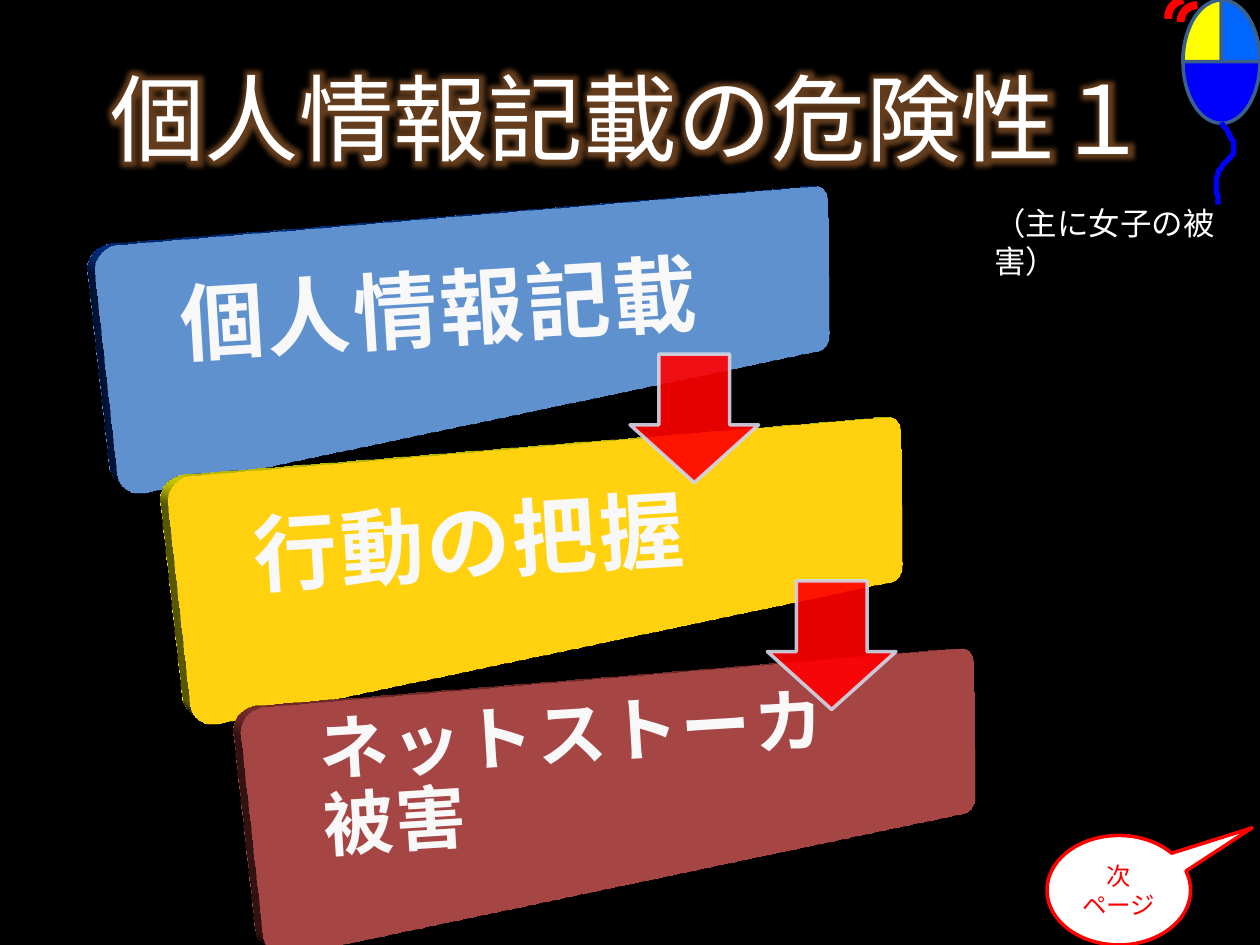
from lxml import etree
from pptx import Presentation
from pptx.dml.color import RGBColor
from pptx.enum.shapes import MSO_SHAPE
from pptx.enum.text import MSO_ANCHOR, MSO_AUTO_SIZE, PP_ALIGN
from pptx.oxml import parse_xml
from pptx.oxml.ns import nsdecls, qn
from pptx.util import Pt

LEFT, CENTER = PP_ALIGN.LEFT, PP_ALIGN.CENTER
TOP, MIDDLE = MSO_ANCHOR.TOP, MSO_ANCHOR.MIDDLE
FIT_SHAPE = MSO_AUTO_SIZE.SHAPE_TO_FIT_TEXT
ROUNDED, DOWN_ARROW = MSO_SHAPE.ROUNDED_RECTANGLE, MSO_SHAPE.DOWN_ARROW
CALLOUT, OVAL = MSO_SHAPE.OVAL_CALLOUT, MSO_SHAPE.OVAL
PIE, ARC = MSO_SHAPE.PIE, MSO_SHAPE.ARC

FONT = "Calibri"
BLACK = RGBColor(0x00, 0x00, 0x00)
WHITE = RGBColor(0xFF, 0xFF, 0xFF)
OFF_WHITE = RGBColor(0xF8, 0xF8, 0xF8)
RED = RGBColor(0xFF, 0x00, 0x00)
PALE_BLUE = RGBColor(0xD0, 0xD8, 0xE8)
STEEL = RGBColor(0x4F, 0x81, 0xBD)
NAVY = RGBColor(0x00, 0x20, 0x60)
DEEP_BLUE = RGBColor(0x00, 0x38, 0xA0)
AMBER = RGBColor(0xFF, 0xC0, 0x00)
OLIVE = RGBColor(0xBC, 0xB8, 0x00)
YELLOW = RGBColor(0xFF, 0xFF, 0x00)
BRICK = RGBColor(0x95, 0x37, 0x35)
MAROON = RGBColor(0x63, 0x25, 0x23)
BLUE = RGBColor(0x00, 0x00, 0xFF)
BRIGHT_BLUE = RGBColor(0x00, 0x66, 0xFF)
MOUSE_EDGE = RGBColor(0x3A, 0x5F, 0x8C)
GLOW = RGBColor(0xF7, 0x96, 0x46)

# Text, size, front, edge and side colour of each step
STEPS = [
    ("個人情報記載", 48, STEEL, NAVY, DEEP_BLUE),
    ("行動の把握", 48, AMBER, OLIVE, YELLOW),
    ("ネットストーカ被害", 40, BRICK, MAROON, BRICK),
]


def write(shape, text, size, color, align=LEFT, anchor=TOP, bold=False,
          wrap=True, margins=(7.2, 3.6, 7.2, 3.6), line=1.0, after=0, spacing=0):
    frame = shape.text_frame
    frame.word_wrap, frame.vertical_anchor = wrap, anchor
    (frame.margin_left, frame.margin_top,
     frame.margin_right, frame.margin_bottom) = map(Pt, margins)
    frame.text = text
    for paragraph in frame.paragraphs:
        paragraph.alignment = align
        paragraph.line_spacing, paragraph.space_after = line, Pt(after)
        for run in paragraph.runs:
            font = run.font
            font.name, font.size, font.bold = FONT, Pt(size), bold
            font.color.rgb = color
            if spacing:
                run._r.get_or_add_rPr().set("spc", str(int(spacing * 100)))
    return frame


def add_text(shapes, box, text, size, color, **text_format):
    return write(shapes.add_textbox(*map(Pt, box)), text, size, color, **text_format)


def style(shape, fill, line, width):
    shape.shadow.inherit = False
    if fill is None:
        shape.fill.background()
    else:
        shape.fill.solid()
        shape.fill.fore_color.rgb = fill
    shape.line.color.rgb = line
    shape.line.width = Pt(width)


def add_preset(shapes, kind, box, fill, line, width=2, adjust=(), flip=False):
    shape = shapes.add_shape(kind, *map(Pt, box))
    style(shape, fill, line, width)
    for index, value in enumerate(adjust):
        shape.adjustments[index] = value
    if flip:
        shape._element.spPr.find(qn("a:xfrm")).set("flipH", "1")
    return shape


def add_glow(frame, color, radius, opacity):
    fill = frame.paragraphs[0].runs[0]._r.rPr.find(qn("a:solidFill"))
    fill.addnext(parse_xml(
        f'<a:effectLst {nsdecls("a")}><a:glow rad="{Pt(radius)}">'
        f'<a:srgbClr val="{color}"><a:alpha val="{opacity * 1000}"/></a:srgbClr>'
        '</a:glow></a:effectLst>'))


def make_translucent(shape, opacity):
    for color in shape._element.spPr.iter(qn("a:srgbClr")):
        etree.SubElement(color, qn("a:alpha")).set("val", str(opacity * 1000))


def extrude(shape, depth, side):
    properties = shape._element.spPr
    properties.append(parse_xml(
        f'<a:scene3d {nsdecls("a")}>'
        '<a:camera prst="perspectiveHeroicExtremeRightFacing"/>'
        '<a:lightRig rig="threePt" dir="t"/></a:scene3d>'))
    properties.append(parse_xml(
        f'<a:sp3d {nsdecls("a")} extrusionH="{Pt(depth)}">'
        f'<a:extrusionClr><a:srgbClr val="{side}"/></a:extrusionClr></a:sp3d>'))


def bezier(start, first, second, end, steps=8):
    weights = [(i / steps, 1 - i / steps) for i in range(1, steps + 1)]
    return [tuple(u**3 * a + 3 * u * u * t * b + 3 * u * t * t * c + t**3 * d
                  for a, b, c, d in zip(start, first, second, end))
            for t, u in weights]


def add_steps(shapes):
    for index, (text, size, front, edge, side) in enumerate(STEPS):
        box = (81.4 + 41.75 * index, 118.1 + 131.9 * index, 473.3, 113.3)
        panel = add_preset(shapes, ROUNDED, box, front, edge, adjust=[0.1])
        inset = size * 0.38
        write(panel, text, size, OFF_WHITE, anchor=MIDDLE, bold=True,
              margins=(inset, inset, inset + 115, inset),
              line=0.9, after=size * 0.35, spacing=1.5)
        extrude(panel, 15, side)
    for index in range(len(STEPS) - 1):
        box = (360 + 78.5 * index, 202.3 + 129.6 * index, 73.5, 73.5)
        arrow = add_preset(shapes, DOWN_ARROW, box, RED, PALE_BLUE,
                           adjust=[0.55, 0.45])
        make_translucent(arrow, 90)


def add_mouse(shapes):
    mouse = shapes.add_group_shape().shapes
    body = (676, 0, 44, 70.5)
    add_preset(mouse, OVAL, body, BLUE, MOUSE_EDGE)
    for fill, flip in ((YELLOW, False), (BRIGHT_BLUE, True)):
        add_preset(mouse, PIE, body, fill, MOUSE_EDGE, adjust=[108, 162], flip=flip)

    # Cable
    start, upper, lower, end = (697.7, 70.5), (705, 85), (695.5, 100), (696.2, 116.6)
    points = (bezier(start, (702, 75.6), (705.6, 80), upper)
              + bezier(upper, (705, 90), (697, 95), lower)
              + bezier(lower, (694, 105), (695.5, 111), end))
    builder = mouse.build_freeform(*start, scale=Pt(1))
    builder.add_line_segments(points, close=False)
    style(builder.convert_to_shape(), None, BLUE, 3)

    # Click marks
    for left, top, turn in ((667.5, 0, 353.5), (674.6, 2.9, 0)):
        mark = add_preset(mouse, ARC, (left, top, 19.4, 19.4), None, RED, 4.5, flip=True)
        mark.rotation = turn


def main():
    deck = Presentation()
    deck.slide_width, deck.slide_height = Pt(720), Pt(540)
    slide = deck.slides.add_slide(deck.slide_layouts[6])
    slide.background.fill.solid()
    slide.background.fill.fore_color.rgb = BLACK
    shapes = slide.shapes

    # Title
    title = add_text(shapes, (36, 21.6, 648, 90), "個人情報記載の危険性１", 54, WHITE,
                     align=CENTER, anchor=MIDDLE)
    add_glow(title, GLOW, 11, 40)

    add_steps(shapes)

    # Side note
    note = add_text(shapes, (561, 113, 159, 29), "（主に女子の被害）", 18, WHITE, wrap=False)
    note.auto_size = FIT_SHAPE

    # Next page callout
    callout = add_preset(shapes, CALLOUT, (598.3, 477.4, 82, 62.6), WHITE, RED,
                         adjust=[0.93, -0.57])
    write(callout, "次\nページ", 14, RED, align=CENTER, anchor=MIDDLE)

    add_mouse(shapes)
    deck.save("out.pptx")


if __name__ == "__main__":
    main()
